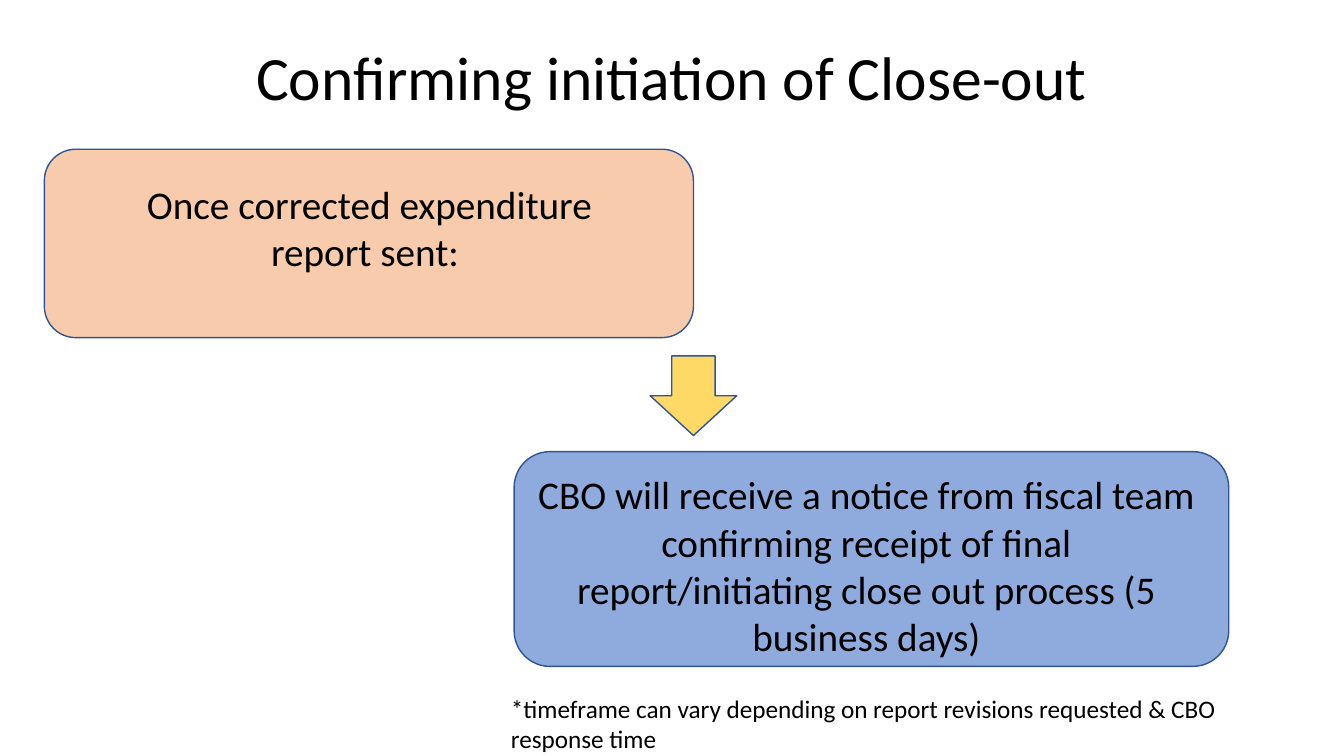
from dataclasses import dataclass

from pptx import Presentation
from pptx.dml.color import RGBColor
from pptx.enum.shapes import MSO_SHAPE
from pptx.enum.text import MSO_ANCHOR, PP_ALIGN
from pptx.util import Pt


@dataclass(frozen=True)
class Theme:
    font: str = "Calibri"
    ink: str = "000000"
    outline: str = "325491"
    outline_width: float = 1
    sent: str = "F8CBAD"
    arrow: str = "FFD966"
    notice: str = "8FAADC"
    title_size: int = 44
    body_size: int = 28
    note_size: int = 18


THEME = Theme()


def add_block(slide, preset, box, fill):
    block = slide.shapes.add_shape(preset, *map(Pt, box))
    block.shadow.inherit = False
    block.fill.solid()
    block.fill.fore_color.rgb = RGBColor.from_string(fill)
    block.line.color.rgb = RGBColor.from_string(THEME.outline)
    block.line.width = Pt(THEME.outline_width)


def add_words(slide, box, words, size, align=PP_ALIGN.CENTER,
              anchor=MSO_ANCHOR.TOP, spacing=1.0):
    frame = slide.shapes.add_textbox(*map(Pt, box)).text_frame
    frame.word_wrap = True
    frame.vertical_anchor = anchor
    paragraph = frame.paragraphs[0]
    paragraph.alignment = align
    paragraph.line_spacing = spacing
    run = paragraph.add_run()
    run.text = words
    run.font.name = THEME.font
    run.font.size = Pt(size)
    run.font.color.rgb = RGBColor.from_string(THEME.ink)


def add_title(slide, box, words):
    add_words(slide, box, words, THEME.title_size,
              anchor=MSO_ANCHOR.MIDDLE, spacing=0.9)


def add_step(slide, box, fill, words, inset):
    """Rounded step with words inset by (left, top, right, bottom)."""
    x, y, width, height = box
    left, top, right, bottom = inset
    add_block(slide, MSO_SHAPE.ROUNDED_RECTANGLE, box, fill)
    words_box = (x + left, y + top, width - left - right, height - top - bottom)
    add_words(slide, words_box, words, THEME.body_size)


def add_arrow(slide, box):
    add_block(slide, MSO_SHAPE.DOWN_ARROW, box, THEME.arrow)


def add_footnote(slide, box, words):
    add_words(slide, box, words, THEME.note_size, align=PP_ALIGN.LEFT)


def main():
    deck = Presentation()
    deck.slide_width, deck.slide_height = Pt(960), Pt(540)
    slide = deck.slides.add_slide(deck.slide_layouts[6])

    # Heading
    add_title(slide, (66, 10.8, 828, 92.9), "Confirming initiation of Close-out")

    # Report sent, then notice received
    add_step(slide, (31.7, 106.6, 463.7, 134.6), THEME.sent,
             "Once corrected expenditure report sent: ", (44.6, 18.7, 44, 18.7))
    add_arrow(slide, (464.4, 254.2, 61.9, 56.9))
    add_step(slide, (367.2, 322.6, 510.5, 153.4), THEME.notice,
             "CBO will receive a notice from fiscal team confirming receipt of "
             "final report/initiating close out process (5 business days)",
             (7.9, 10.1, 15.2, 0))

    # Timeframe caveat
    add_footnote(slide, (357.8, 491.8, 574.6, 51.1),
                 "*timeframe can vary depending on report revisions requested "
                 "& CBO response time")

    deck.save("out.pptx")


if __name__ == "__main__":
    main()
